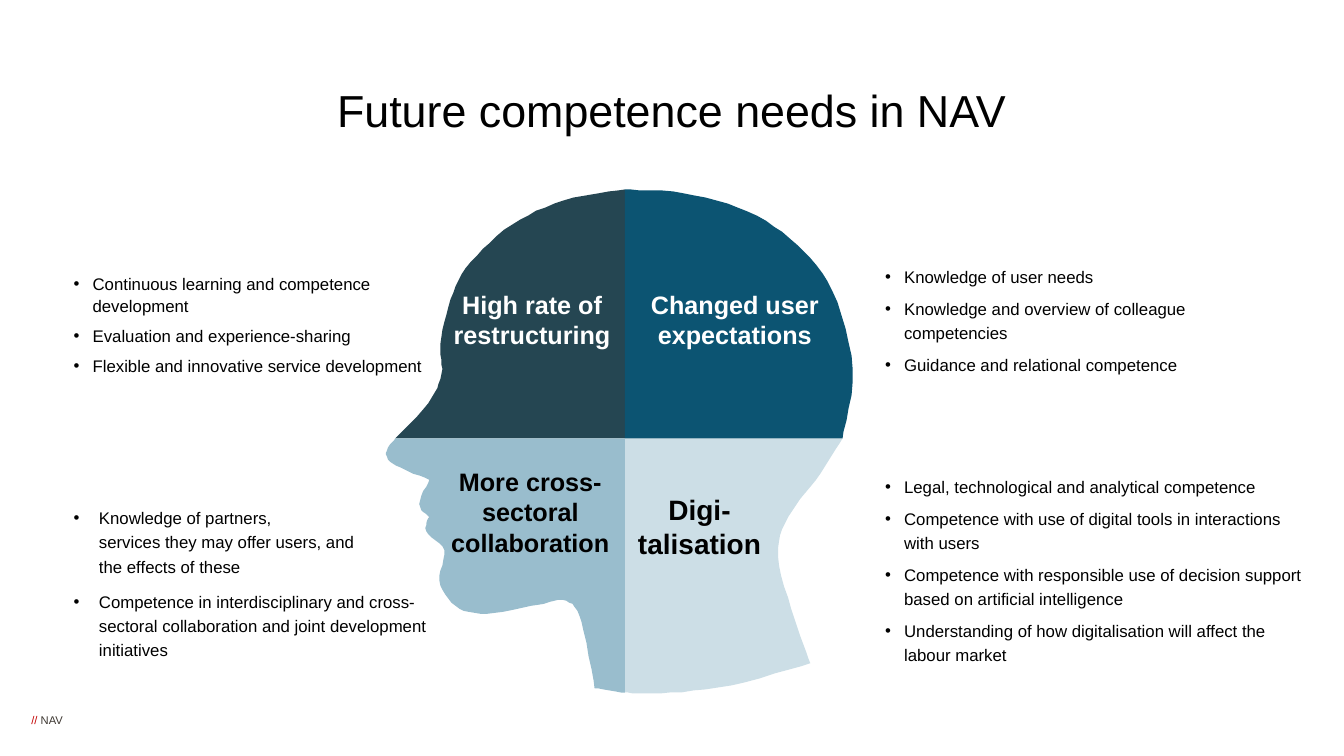
from lxml import etree
from pptx import Presentation
from pptx.dml.color import RGBColor
from pptx.enum.text import MSO_ANCHOR, MSO_AUTO_SIZE, PP_ALIGN
from pptx.oxml.ns import qn
from pptx.util import Cm, Pt

CENTER = PP_ALIGN.CENTER
TOP, MIDDLE = MSO_ANCHOR.TOP, MSO_ANCHOR.MIDDLE
NO_FIT = MSO_AUTO_SIZE.NONE

BLACK = RGBColor(0x00, 0x00, 0x00)
WHITE = RGBColor(0xFF, 0xFF, 0xFF)
RED = RGBColor(0xC3, 0x00, 0x00)
BROWN = RGBColor(0x3E, 0x38, 0x32)
SLATE = RGBColor(0x25, 0x46, 0x52)
PALE = RGBColor(0xCC, 0xDE, 0xE6)
SKY = RGBColor(0x99, 0xBD, 0xCD)
TEAL = RGBColor(0x0C, 0x54, 0x72)

FONT = "Arial"
HUNDREDTH_INCH = Cm(2.54) / 100
CURVE_STEPS = 6


def set_frame(box, place, anchor=TOP):
    """Place a box, given as left, top, width and height in cm, and fix its text frame."""
    box.left, box.top, box.width, box.height = (Cm(length) for length in place)
    frame = box.text_frame
    frame.word_wrap = True
    frame.auto_size = NO_FIT
    frame.vertical_anchor = anchor
    return frame


def add_text(para, text, size, colour, bold=False):
    """Add one run per line of text, with line breaks between them."""
    for number, line in enumerate(text.split("\n")):
        if number:
            para.add_line_break()
        span = para.add_run()
        span.text = line
        span.font.name = FONT
        span.font.size = Pt(size)
        span.font.bold = bold
        span.font.color.rgb = colour


deck = Presentation()
deck.slide_width, deck.slide_height = Cm(33.87), Cm(19.05)
page = deck.slides.add_slide(deck.slide_layouts.get_by_name("Comparison"))

# Title
title_frame = set_frame(page.shapes.title, (2.33, 1.35, 29.21, 2.97), MIDDLE)
title = title_frame.paragraphs[0]
title.alignment = CENTER
title.line_spacing = 0.9
add_text(title, "Future competence needs in NAV", 32, BLACK)

# Quarters of the head: smooth curves from the shared centre, in hundredths of an inch
HEAD_CENTRE = (620, 435)
CROWN, NECK = (620, 188), (620, 687)
NOSE, NAPE = (392, 435), (836, 435)
LIP, MOUTH = (426, 476), (426, 513)
THROAT, COLLAR = (590, 683), (804, 658)
QUARTERS = [
    (SLATE, [[CROWN, (559, 199), (508, 223), (467, 260), (447, 297),
              (437, 341), (438, 371), (425, 400), NOSE]]),
    (PALE, [[NAPE, (809, 477), (782, 513), (772, 552), (788, 613), COLLAR],
            [COLLAR, (726, 680), (655, 688), NECK]]),
    (SKY, [[NOSE, (383, 449), (393, 462), LIP],
           [LIP, (416, 500), MOUTH],
           [MOUTH, (423, 527), (441, 546), (436, 576), (452, 601), (483, 609),
            (534, 600), (562, 596), (577, 617), THROAT],
           [THROAT, NECK]]),
    (TEAL, [[CROWN, (679, 192), (742, 210), (791, 243), (826, 289),
             (846, 366), NAPE]]),
]
for colour, curves in QUARTERS:
    outline = [curves[0][0]]
    for curve in curves:
        knots = [curve[0], *curve, curve[-1]]
        # Catmull-Rom spline through each run of four knots
        for four in zip(knots, knots[1:], knots[2:], knots[3:]):
            for step in range(1, CURVE_STEPS + 1):
                t = step / CURVE_STEPS
                outline.append(tuple(
                    b + t * (c - a) / 2
                    + t ** 2 * (2 * a - 5 * b + 4 * c - d) / 2
                    + t ** 3 * (3 * b - a - 3 * c + d) / 2
                    for a, b, c, d in zip(*four)))
    builder = page.shapes.build_freeform(*HEAD_CENTRE, scale=HUNDREDTH_INCH)
    builder.add_line_segments(outline, close=True)
    quarter = builder.convert_to_shape()
    quarter.shadow.inherit = False
    quarter.fill.solid()
    quarter.fill.fore_color.rgb = colour
    quarter.line.fill.background()

# Competence lists: placeholder, place, indent in cm, line spacing, space after, items
LISTS = [
    (1, (1.6, 6.71, 9.55, 3.78), 0.48, 16, 5.3, [
        "Continuous learning and competence development",
        "Evaluation and experience-sharing",
        "Flexible and innovative service development"]),
    (2, (1.6, 12.57, 9.78, 3.51), 0.64, 17.3, 8, [
        "Knowledge of partners,\nservices they may offer users, and\nthe effects of these",
        "Competence in interdisciplinary and cross-sectoral collaboration "
        "and joint development initiatives"]),
    (3, (22.05, 6.5, 10.72, 2.97), 0.48, 17.3, 5.3, [
        "Knowledge of user needs",
        "Knowledge and overview of colleague competencies",
        "Guidance and relational competence"]),
    (4, (22.05, 11.79, 11.33, 4.98), 0.48, 17.3, 5.3, [
        "Legal, technological and analytical competence",
        "Competence with use of digital tools in interactions with users",
        "Competence with responsible use of decision support "
        "based on artificial intelligence",
        "Understanding of how digitalisation will affect the labour market"]),
]
bodies = {body.placeholder_format.idx: body for body in page.placeholders}
for idx, place, indent, spacing, after, items in LISTS:
    frame = set_frame(bodies[idx], place)
    for number, item in enumerate(items):
        para = frame.add_paragraph() if number else frame.paragraphs[0]
        para.line_spacing = Pt(spacing)
        para.space_before = Pt(0)
        para.space_after = Pt(after)
        properties = para._p.get_or_add_pPr()
        properties.set("marL", str(Cm(indent)))
        properties.set("indent", str(-Cm(indent)))
        etree.SubElement(properties, qn("a:buFont")).set("typeface", FONT)
        etree.SubElement(properties, qn("a:buChar")).set("char", "•")
        add_text(para, item, 12, BLACK)

# Labels on the head
LABELS = [
    ("High rate of restructuring", (11.02, 7.16, 4.78, 1.8), 18, WHITE),
    ("Digi-\ntalisation", (14.91, 12.29, 5.44, 1.96), 20, BLACK),
    ("Changed user expectations", (16.13, 7.16, 4.78, 1.8), 18, WHITE),
    ("More cross-\nsectoral collaboration", (10.9, 11.63, 4.93, 2.57), 18, BLACK),
]
for text, place, size, colour in LABELS:
    label = page.shapes.add_textbox(0, 0, 0, 0)
    para = set_frame(label, place).paragraphs[0]
    para.alignment = CENTER
    add_text(para, text, size, colour, bold=True)

# Footer
footer = set_frame(page.shapes.add_textbox(0, 0, 0, 0), (0.79, 17.98, 1.2, 0.33))
footer.margin_left = footer.margin_right = footer.margin_top = footer.margin_bottom = 0
add_text(footer.paragraphs[0], "// ", 8, RED)
add_text(footer.paragraphs[0], "NAV", 8, BROWN)

deck.save("out.pptx")
